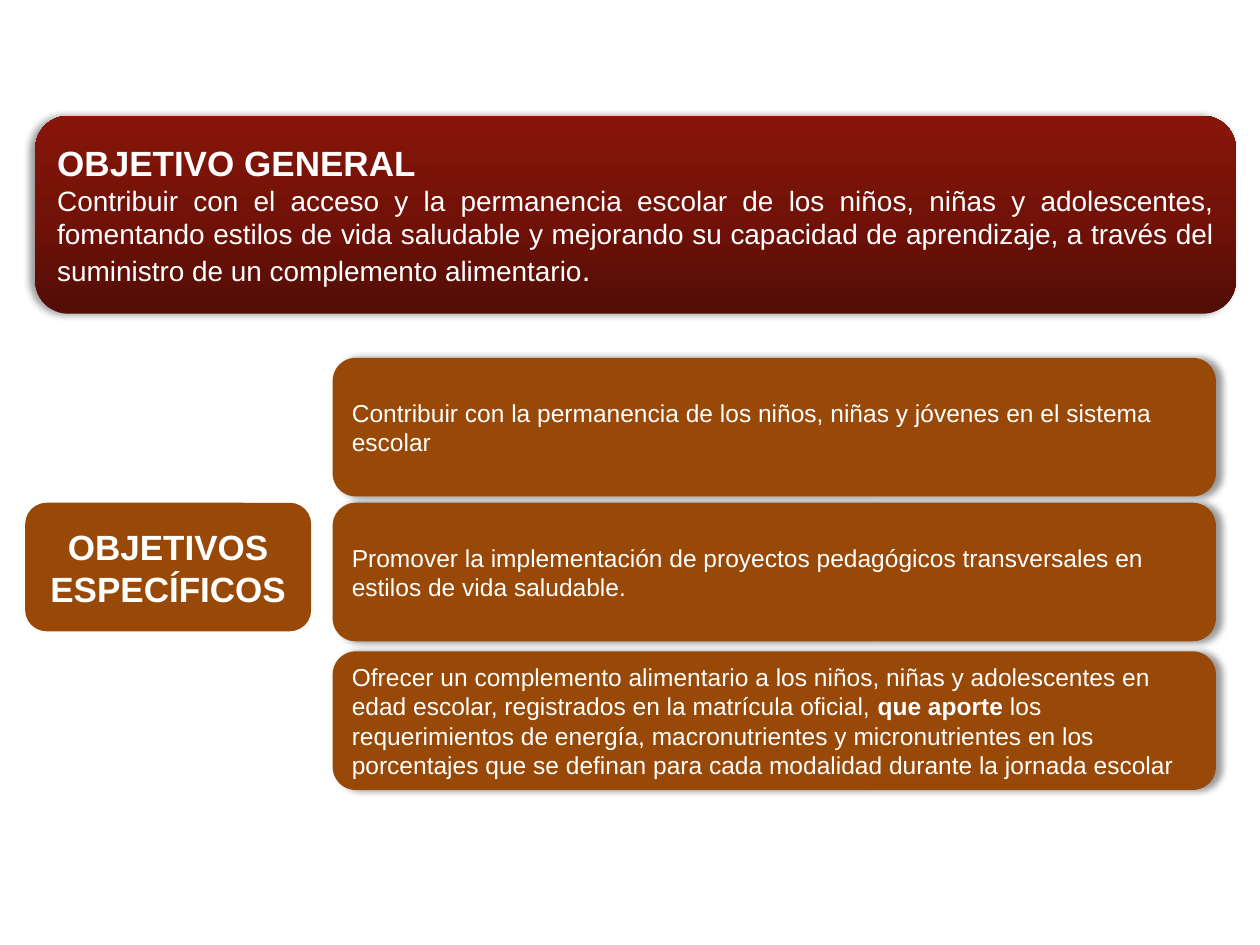
from dataclasses import dataclass

from lxml import etree
from pptx import Presentation
from pptx.dml.color import RGBColor
from pptx.enum.shapes import MSO_SHAPE
from pptx.enum.text import MSO_ANCHOR, PP_ALIGN
from pptx.oxml.ns import qn
from pptx.util import Inches, Pt

ROUNDED = MSO_SHAPE.ROUNDED_RECTANGLE
MIDDLE = MSO_ANCHOR.MIDDLE
LEFT, CENTER, JUSTIFY = PP_ALIGN.LEFT, PP_ALIGN.CENTER, PP_ALIGN.JUSTIFY


@dataclass(frozen=True)
class Theme:
    font: str = "Arial"
    text: str = "FFFFFF"
    brown: str = "984807"
    reds: tuple = ((0, "510D06"), (50, "731208"), (100, "88150A"))
    shadow: str = "000000"
    title: int = 20
    lead: int = 16
    lead_end: int = 18
    body: int = 14


class Deck:
    def __init__(self, theme):
        self.theme = theme
        self.prs = Presentation()
        self.prs.slide_width, self.prs.slide_height = Inches(10), Inches(7.5)
        self.slide = self.prs.slides.add_slide(self.prs.slide_layouts[6])

    def card(self, left, top, width, height, paragraphs, align):
        """Add a rounded card; each paragraph is a list of (text, size, bold)."""
        sp = self.slide.shapes.add_shape(
            ROUNDED, Inches(left), Inches(top), Inches(width), Inches(height))
        sp.shadow.inherit = False
        sp.fill.solid()
        sp.fill.fore_color.rgb = RGBColor.from_string(self.theme.brown)
        sp.line.fill.background()
        tf = sp.text_frame
        tf.word_wrap = True
        tf.vertical_anchor = MIDDLE
        for i, runs in enumerate(paragraphs):
            p = tf.paragraphs[0] if i == 0 else tf.add_paragraph()
            p.alignment = align
            for text, size, bold in runs:
                r = p.add_run()
                r.text = text
                r.font.name = self.theme.font
                r.font.size = Pt(size)
                r.font.bold = bold
                r.font.color.rgb = RGBColor.from_string(self.theme.text)
        return sp

    def gradient(self, sp, stops):
        """Fill with (percent, colour) stops running from bottom to top."""
        sp.fill.gradient()
        sp.fill.gradient_angle = 90
        stop_list = sp._element.spPr.find(".//" + qn("a:gsLst"))
        for old in list(stop_list):
            stop_list.remove(old)
        for percent, colour in stops:
            gs = etree.SubElement(stop_list, qn("a:gs"), pos=str(percent * 1000))
            etree.SubElement(gs, qn("a:srgbClr"), val=colour)

    def drop_shadow(self, sp, angle):
        effects = sp._element.spPr.find(qn("a:effectLst"))
        shadow = etree.SubElement(
            effects, qn("a:outerShdw"), blurRad=str(Pt(4)), dist=str(Pt(3)),
            dir=str(angle * 60000), algn="ctr", rotWithShape="0")
        colour = etree.SubElement(shadow, qn("a:srgbClr"), val=self.theme.shadow)
        etree.SubElement(colour, qn("a:alpha"), val="40000")


def main():
    theme = Theme()
    deck = Deck(theme)

    general = deck.card(0.28, 0.92, 9.53, 1.57, [
        [("OBJETIVO GENERAL", theme.title, True)],
        [("Contribuir con el acceso y la permanencia escolar de los niños, niñas y "
          "adolescentes, fomentando estilos de vida saludable y mejorando su capacidad "
          "de aprendizaje, a través del suministro de un complemento alimentario",
          theme.lead, False),
         (".", theme.lead_end, False)],
    ], JUSTIFY)
    deck.gradient(general, theme.reds)
    deck.drop_shadow(general, 180)

    deck.card(0.2, 3.99, 2.27, 1.02,
              [[("OBJETIVOS ESPECÍFICOS", theme.title, True)]], CENTER)

    objectives = [
        (2.84, [("Contribuir con la permanencia de los niños, niñas y jóvenes en el "
                 "sistema escolar", False)]),
        (3.99, [("Promover la implementación de proyectos pedagógicos transversales en "
                 "estilos de vida saludable.", False)]),
        (5.17, [("Ofrecer un complemento alimentario a los niños, niñas y adolescentes "
                 "en edad escolar, registrados en la matrícula oficial, ", False),
                ("que aporte ", True),
                ("los requerimientos de energía, macronutrientes y micronutrientes en "
                 "los porcentajes que se definan para cada modalidad durante la "
                 "jornada escolar", False)]),
    ]
    for top, parts in objectives:
        runs = [(text, theme.body, bold) for text, bold in parts]
        deck.drop_shadow(deck.card(2.64, top, 7.01, 1.1, [runs], LEFT), 0)

    deck.prs.save("out.pptx")


if __name__ == "__main__":
    main()
